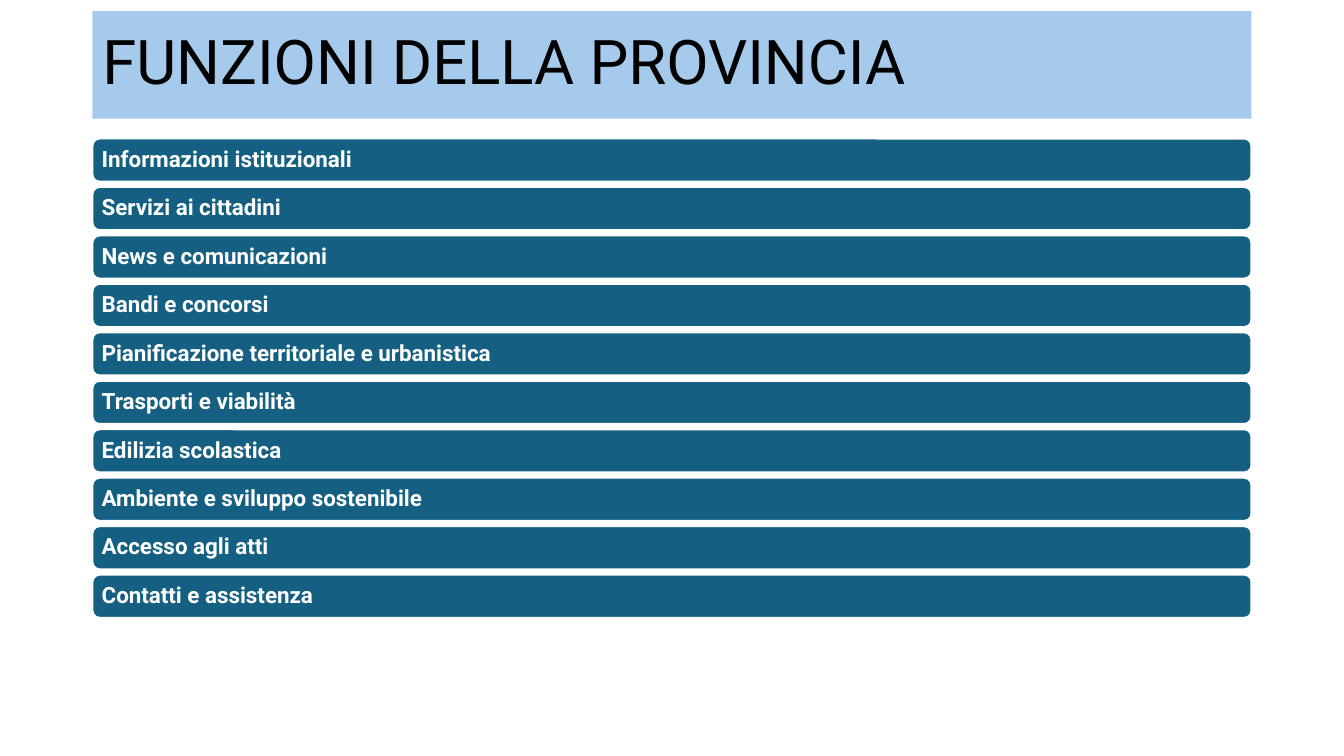
from pptx import Presentation
from pptx.dml.color import RGBColor
from pptx.enum.shapes import MSO_SHAPE as Kind
from pptx.enum.text import MSO_ANCHOR as Anchor, PP_ALIGN as Align
from pptx.util import Cm, Pt

FONT = "Roboto"
LEFT, WIDTH = 2.33, 29.21
TOPICS = [
    "Informazioni istituzionali",
    "Servizi ai cittadini",
    "News e comunicazioni",
    "Bandi e concorsi",
    "Pianificazione territoriale e urbanistica",
    "Trasporti e viabilità",
    "Edilizia scolastica",
    "Ambiente e sviluppo sostenibile",
    "Accesso agli atti",
    "Contatti e assistenza",
]


def paint(target, color):
    """Set a fill, or a font's fill, to a solid hex colour."""
    target.solid()
    target.fore_color.rgb = RGBColor.from_string(color)


def assign(target, values):
    for name, value in values.items():
        setattr(target, name, value)


def add_box(slide, kind, box, fill, text, color, font):
    """Add a filled shape with one left-aligned, vertically centred line."""
    shape = slide.shapes.add_shape(kind, *map(Cm, box))
    shape.shadow.inherit = False
    paint(shape.fill, fill)
    shape.line.fill.background()
    frame = shape.text_frame
    assign(frame, {"word_wrap": True, "vertical_anchor": Anchor.MIDDLE})
    para = frame.paragraphs[0]
    assign(para, {"alignment": Align.LEFT, "line_spacing": 0.9})
    run = para.add_run()
    run.text = text
    assign(run.font, {"name": FONT, **font})
    paint(run.font.fill, color)
    return shape


def add_title(slide, box, text):
    add_box(slide, Kind.RECTANGLE, box, "A6CAEC", text, "000000",
            {"size": Pt(44), "bold": False})


def add_bars(slide, box, topics):
    """Stack one rounded bar per topic, evenly, to fill the box."""
    left, top, width, height = box
    bar = 1.09
    step = (height - bar) / (len(topics) - 1)
    inset = Cm(0.18)
    sides = ("left", "top", "right", "bottom")
    for i, topic in enumerate(topics):
        shape = add_box(slide, Kind.ROUNDED_RECTANGLE,
                        (left, top + i * step, width, bar),
                        "156082", topic, "FFFFFF",
                        {"size": Pt(16), "bold": True})
        paint(shape.line.fill, "FFFFFF")
        shape.line.width = Pt(1.5)
        assign(shape.text_frame, {f"margin_{side}": inset for side in sides})


def main():
    deck = Presentation()
    assign(deck, {"slide_width": Cm(33.87), "slide_height": Cm(19.05)})
    slide = deck.slides.add_slide(deck.slide_layouts[6])
    add_title(slide, (LEFT, 0.28, WIDTH, 2.71), "FUNZIONI DELLA PROVINCIA")
    add_bars(slide, (LEFT, 3.49, WIDTH, 12.08), TOPICS)
    deck.save("out.pptx")


if __name__ == "__main__":
    main()
